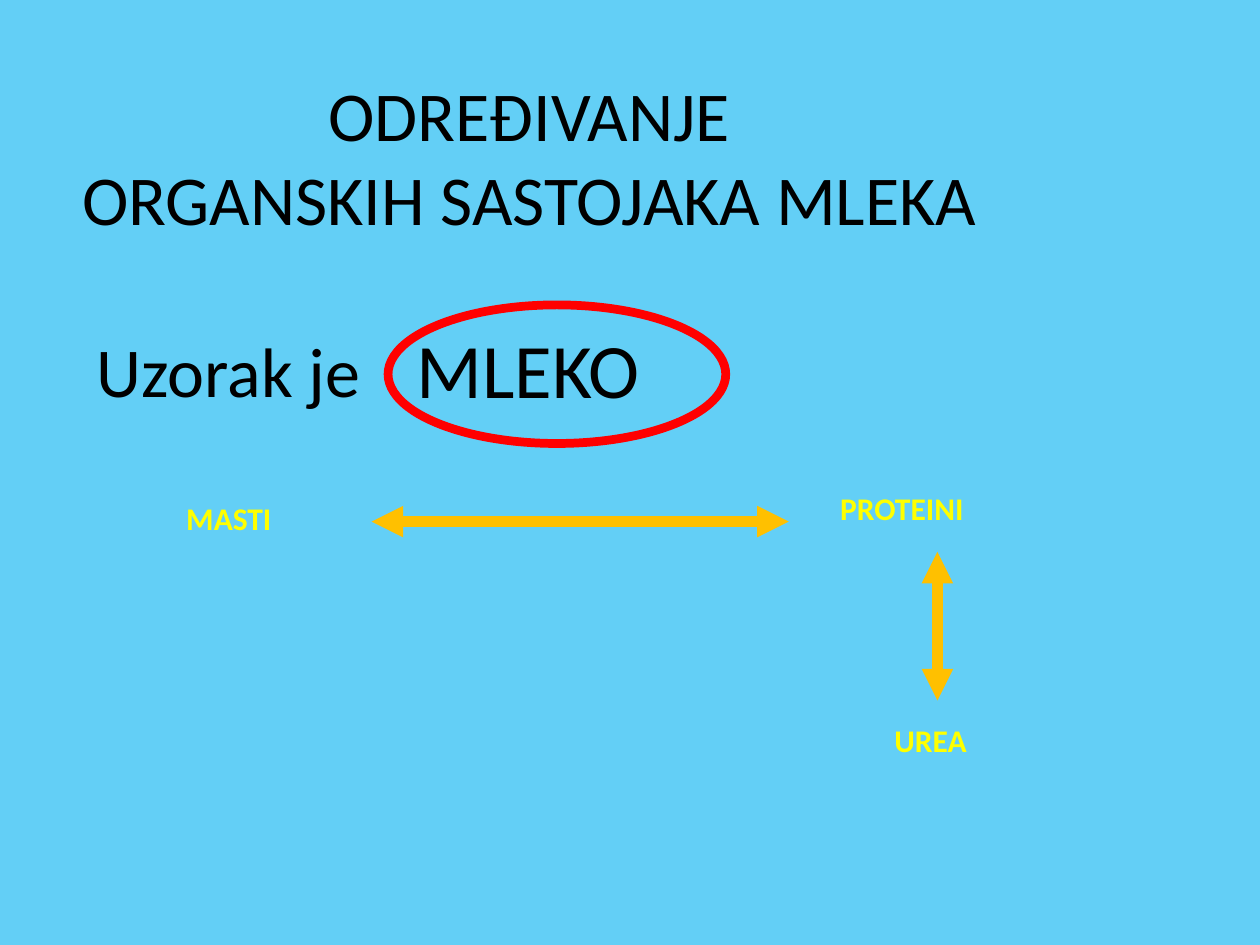
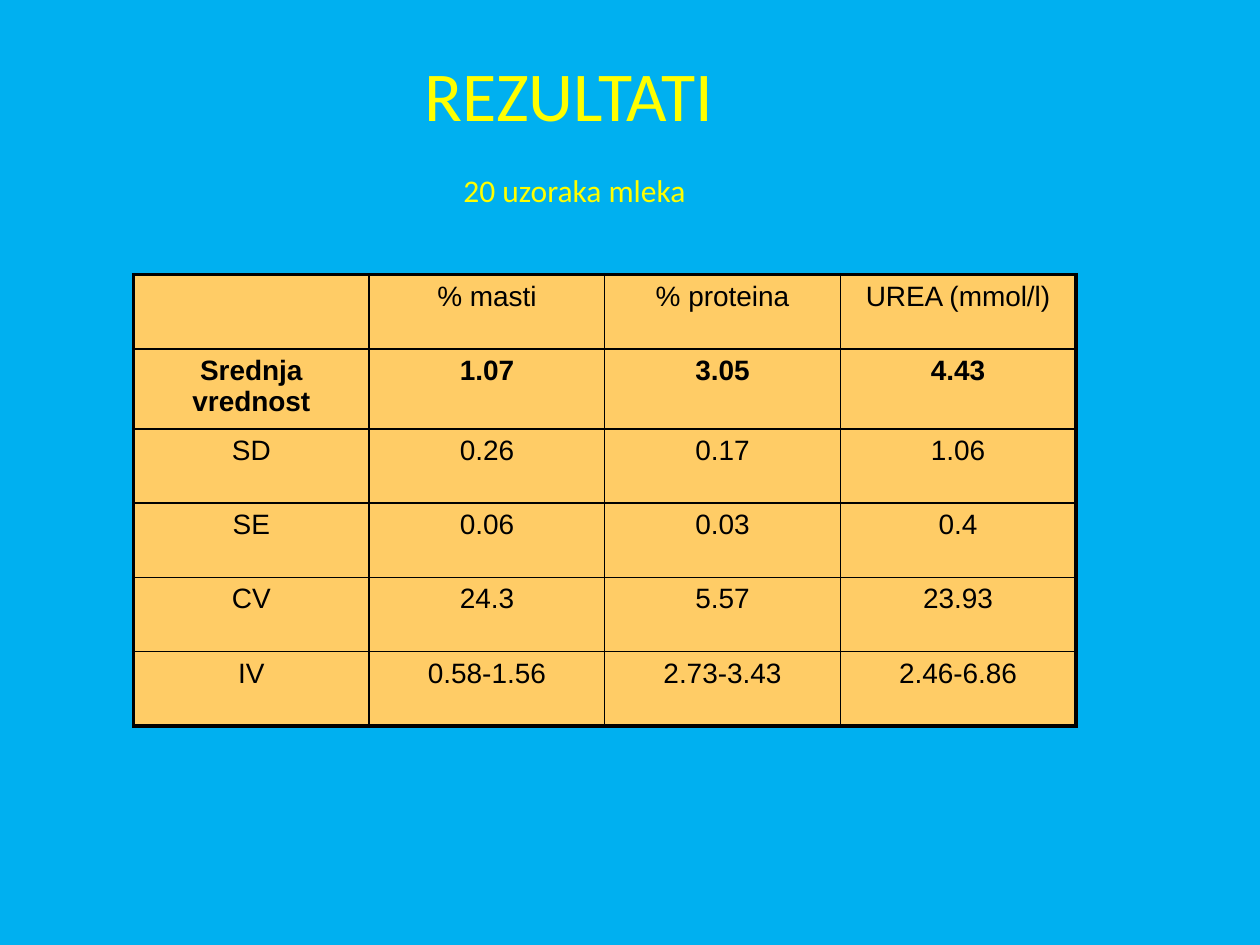
import pptx
import pptx.util
import pptx.dml.color
import pptx.enum.shapes
import pptx.enum.text
import pptx.oxml.ns
import lxml.etree

Inches, Pt = pptx.util.Inches, pptx.util.Pt
RGB = pptx.dml.color.RGBColor
ALIGN = pptx.enum.text.PP_ALIGN
qn = pptx.oxml.ns.qn

PALE = RGB(0x63, 0xCF, 0xF6)
SKY = RGB(0x00, 0xB0, 0xF0)
BLACK = RGB(0x00, 0x00, 0x00)
YELLOW = RGB(0xFF, 0xFF, 0x00)
RED = RGB(0xFF, 0x00, 0x00)
GOLD = RGB(0xFF, 0xC0, 0x00)
SAND = RGB(0xFF, 0xCC, 0x66)

TITLE = {"size": Pt(40), "name": "Calibri", "bold": False}
LARGE = {**TITLE, "size": Pt(44)}
SMALL = {**TITLE, "size": Pt(18)}
LABEL = {**SMALL, "bold": True}
CELL = {"size": Pt(16), "name": "Arial", "bold": False}


def style(para, form, color, align):
    """Apply a font format, a colour and an alignment to a paragraph."""
    para.alignment = align
    for key, value in form.items():
        setattr(para.font, key, value)
    para.font.color.rgb = color


def write(slide, text, box, form, color, align=ALIGN.LEFT):
    """Add a text box with one paragraph for each line of text."""
    frame = slide.shapes.add_textbox(*map(Inches, box)).text_frame
    frame.word_wrap = True
    frame.text = text
    for para in frame.paragraphs:
        style(para, form, color, align)


deck = pptx.Presentation()
deck.slide_width, deck.slide_height = Inches(10), Inches(7.5)
slides = []
for color in (PALE, SKY):
    slide = deck.slides.add_slide(deck.slide_layouts[6])
    slide.background.fill.solid()
    slide.background.fill.fore_color.rgb = color
    slides.append(slide)
intro, result = slides

# Milk sample and its organic components
write(intro, "ODREĐIVANJE\nORGANSKIH SASTOJAKA MLEKA",
      (0.51, 0.52, 7.38, 1.45), TITLE, BLACK, ALIGN.CENTER)
for text, left, top, width in (
    ("MASTI", 1.38, 3.91, 1), ("PROTEINI", 6.57, 3.83, 1.3), ("UREA", 7, 5.67, 0.9),
):
    write(intro, text, (left, top, width, 0.41), LABEL, YELLOW)
write(intro, "Uzorak je", (0.67, 2.55, 2.5, 0.77), TITLE, BLACK)
write(intro, "MLEKO", (3.21, 2.5, 2.1, 0.85), LARGE, BLACK)

ring = intro.shapes.add_shape(
    pptx.enum.shapes.MSO_SHAPE.OVAL, Inches(3.08), Inches(2.42), Inches(2.68), Inches(1.1))
ring.shadow.inherit = False
ring.fill.background()
ring.line.color.rgb = RED
ring.line.width = Pt(5)

for ends in ((2.95, 4.14, 6.26, 4.14), (7.44, 5.56, 7.44, 4.38)):
    arrow = intro.shapes.add_connector(
        pptx.enum.shapes.MSO_CONNECTOR.STRAIGHT, *map(Inches, ends))
    arrow.line.color.rgb = GOLD
    arrow.line.width = Pt(6)
    line = arrow.line._get_or_add_ln()
    for tag in ("a:headEnd", "a:tailEnd"):
        lxml.etree.SubElement(line, qn(tag), type="triangle")
    lxml.etree.SubElement(arrow._element.spPr, qn("a:effectLst"))

# Results
write(result, "20 uzoraka mleka", (3.58, 1.31, 6, 0.41), SMALL, YELLOW)
write(result, "REZULTATI", (3.27, 0.36, 3.23, 0.77), TITLE, YELLOW)

rows = (
    ("", "% masti", "% proteina", "UREA (mmol/l)"),
    ("Srednja vrednost", "1.07", "3.05", "4.43"),
    ("SD", "0.26", "0.17", "1.06"),
    ("SE", "0.06", "0.03", "0.4"),
    ("CV", "24.3", "5.57", "23.93"),
    ("IV", "0.58-1.56", "2.73-3.43", "2.46-6.86"),
)
high, wide = len(rows), len(rows[0])
table = result.shapes.add_table(
    high, wide, Inches(1.06), Inches(2.18), Inches(1.87 * wide), Inches(0.59 * high)).table
table.first_row = table.horz_banding = False

for r, row in enumerate(rows):
    for c, text in enumerate(row):
        cell = table.cell(r, c)
        cell.text = text
        para = cell.text_frame.paragraphs[0]
        style(para, {**CELL, "bold": r == 1}, BLACK, ALIGN.CENTER)
        para.space_before = Pt(3.2)
        outer = {"L": c == 0, "R": c == wide - 1, "T": r == 0, "B": r == high - 1}
        props = cell._tc.get_or_add_tcPr()
        for side, thick in outer.items():
            edge = lxml.etree.SubElement(
                props, qn("a:ln" + side), w=str(Pt(2.25 if thick else 1)))
            paint = lxml.etree.SubElement(edge, qn("a:solidFill"))
            lxml.etree.SubElement(paint, qn("a:srgbClr"), val=str(BLACK))
        cell.fill.solid()
        cell.fill.fore_color.rgb = SAND

deck.save("out.pptx")
